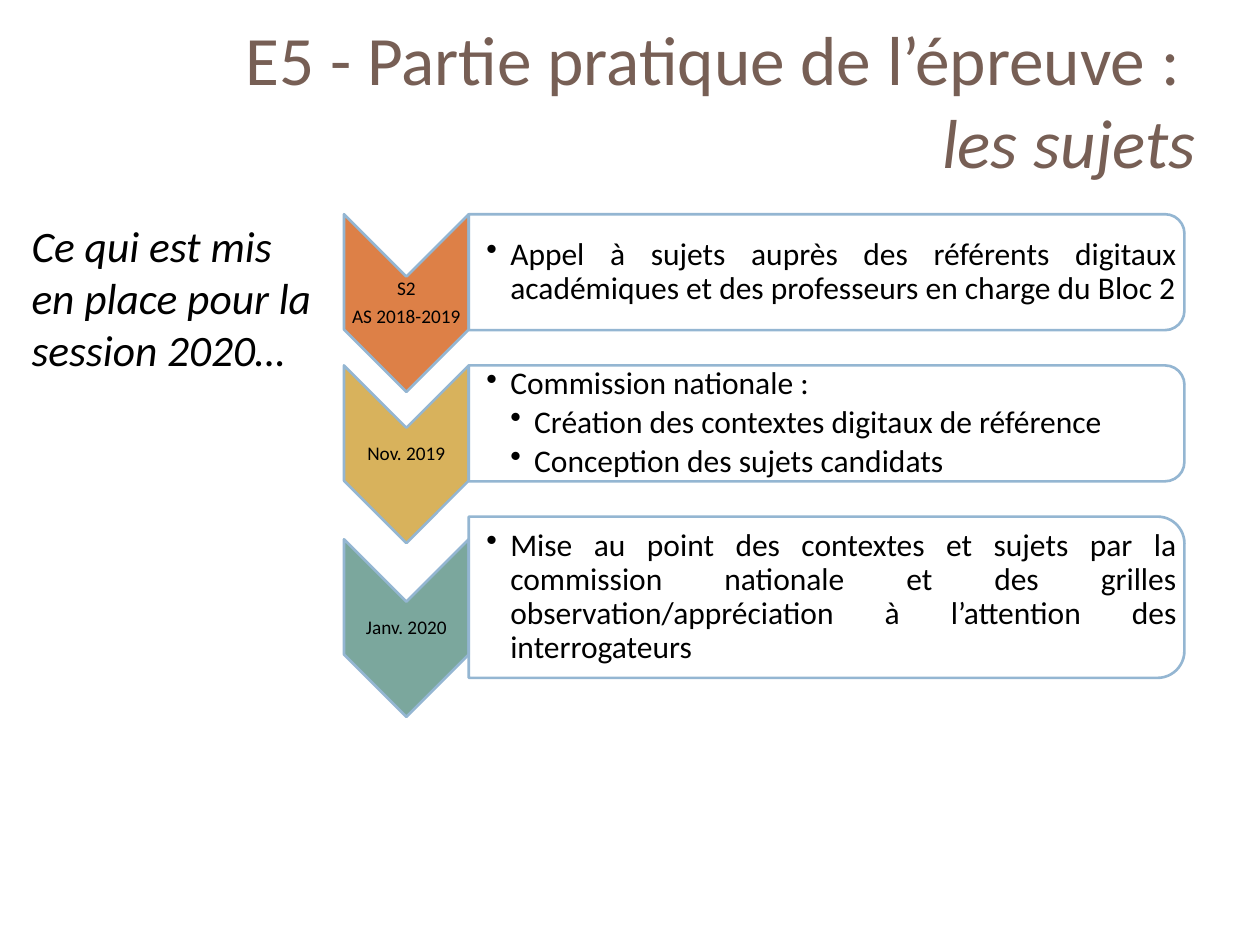
from dataclasses import dataclass

from lxml.etree import SubElement
from pptx import Presentation
from pptx.dml.color import RGBColor
from pptx.enum.shapes import MSO_SHAPE
from pptx.enum.text import MSO_ANCHOR, MSO_AUTO_SIZE, PP_ALIGN
from pptx.oxml.ns import qn
from pptx.util import Inches, Pt

FONT = "Calibri"
BLACK, BROWN, WHITE, BLUE = "000000", "775F55", "FFFFFF", "94B6D2"

# Timeline grid, in inches
TOP, GAP = 1.70, 0.28
ARROW_X, ARROW_W, ARROW_H = 2.73, 0.99, 1.41
PANEL_X, PANEL_W = 3.72, 5.68
ARROW_DROP = 0.245  # arrow centre below panel centre
INDENT = 0.19


@dataclass
class Step:
    dates: list[str]
    colour: str
    height: float
    items: list[tuple[int, str]]  # level, wording
    align: PP_ALIGN = PP_ALIGN.JUSTIFY


STEPS = [
    Step(["S2", "AS 2018-2019"], "DD8047", 0.92,
         [(1, "Appel à sujets auprès des référents digitaux académiques "
              "et des professeurs en charge du Bloc 2")]),
    Step(["Nov. 2019"], "D8B25C", 0.92,
         [(1, "Commission nationale :"),
          (2, "Création des contextes digitaux de référence"),
          (2, "Conception des sujets candidats")], PP_ALIGN.LEFT),
    Step(["Janv. 2020"], "7BA79D", 1.28,
         [(1, "Mise au point des contextes et sujets par la commission nationale "
              "et des grilles observation/appréciation à l’attention des "
              "interrogateurs")]),
]


def rgb(colour: str) -> RGBColor:
    return RGBColor.from_string(colour)


def style(font, size: float, colour: str = BLACK, italic: bool = False) -> None:
    font.name, font.size, font.italic = FONT, Pt(size), italic
    font.color.rgb = rgb(colour)


def place(sp, x: float, y: float, w: float, h: float) -> None:
    sp.left, sp.top, sp.width, sp.height = (Inches(v) for v in (x, y, w, h))


def add_turned(s, kind, cx: float, cy: float, w: float, h: float, fill: str):
    """Add a shape turned a quarter clockwise, showing w by h around its centre."""
    sp = s.shapes.add_shape(kind, Inches(cx - h / 2), Inches(cy - w / 2),
                            Inches(h), Inches(w))
    sp.rotation = 90
    sp.shadow.inherit = False
    sp.fill.solid()
    sp.fill.fore_color.rgb = rgb(fill)
    sp.line.color.rgb = rgb(BLUE)
    sp.line.width = Pt(1.5)
    return sp


def add_text(s, x: float, cy: float, w: float, h: float, left_inset: float = 0.01):
    tf = s.shapes.add_textbox(Inches(x), Inches(cy - h / 2),
                              Inches(w), Inches(h)).text_frame
    tf.word_wrap = True
    tf.vertical_anchor = MSO_ANCHOR.MIDDLE
    tf.margin_left = Inches(left_inset)
    tf.margin_right = tf.margin_top = tf.margin_bottom = Inches(0.01)
    return tf


def add_bullet(p, level: int) -> None:
    p.level = level
    pPr = p._p.get_or_add_pPr()
    pPr.set("marL", str(Inches(INDENT * level)))
    pPr.set("indent", str(-Inches(INDENT)))
    SubElement(pPr, qn("a:buChar")).set("char", "•")


def format_lines(tf, size: float, align: PP_ALIGN, after: float) -> None:
    for p in tf.paragraphs:
        p.alignment, p.line_spacing, p.space_after = align, 0.9, Pt(after)
        for r in p.runs:
            style(r.font, size)


def draw_step(s, step: Step, top: float) -> None:
    cy = top + step.height / 2
    # Dated arrow
    arrow_cx, arrow_cy = ARROW_X + ARROW_W / 2, cy + ARROW_DROP
    add_turned(s, MSO_SHAPE.CHEVRON, arrow_cx, arrow_cy, ARROW_W, ARROW_H, step.colour)
    tf = add_text(s, ARROW_X, arrow_cy, ARROW_W, 0.42)
    tf.text = "\n".join(step.dates)
    format_lines(tf, 11, PP_ALIGN.CENTER, 3.85)
    # Panel with its list
    panel = add_turned(s, MSO_SHAPE.ROUND_2_SAME_RECTANGLE, PANEL_X + PANEL_W / 2, cy,
                       PANEL_W, step.height, WHITE)
    clr = panel.fill._xPr.find(qn("a:solidFill"))[0]
    SubElement(clr, qn("a:alpha")).set("val", "90000")
    tf = add_text(s, PANEL_X, cy, PANEL_W - 0.05, step.height - 0.09, 0.14)
    tf.text = "\n".join(wording for _, wording in step.items)
    for p, (level, _) in zip(tf.paragraphs, step.items):
        add_bullet(p, level)
    format_lines(tf, 18, step.align, 2.7)


def main() -> None:
    prs = Presentation()
    prs.slide_width, prs.slide_height = Inches(10), Inches(7.5)
    s = prs.slides.add_slide(prs.slide_layouts[1])

    # Title
    title = s.shapes.title
    place(title, 0.67, 0.25, 8.92, 1.08)
    tf = title.text_frame
    tf.text = "E5 - Partie pratique de l’épreuve : \vles sujets"
    tf.auto_size = MSO_AUTO_SIZE.NONE
    tf.vertical_anchor = MSO_ANCHOR.MIDDLE
    p = tf.paragraphs[0]
    p.alignment = PP_ALIGN.RIGHT
    for r, italic in zip(p.runs, (False, True)):
        style(r.font, 39.6, BROWN, italic)

    # Introduction
    body = s.placeholders[1]
    place(body, 0.15, 1.69, 2.44, 1.62)
    tf = body.text_frame
    tf.text = "Ce qui est mis en place pour la session 2020…"
    tf.auto_size = MSO_AUTO_SIZE.NONE
    p = tf.paragraphs[0]
    p.space_before = Pt(0)
    pPr = p._p.get_or_add_pPr()
    pPr.set("marL", "0")
    pPr.set("indent", "0")
    SubElement(pPr, qn("a:buNone"))
    style(p.runs[0].font, 24.8, italic=True)

    # Timeline
    top = TOP
    for step in STEPS:
        draw_step(s, step, top)
        top += step.height + GAP

    prs.save("out.pptx")


if __name__ == "__main__":
    main()
